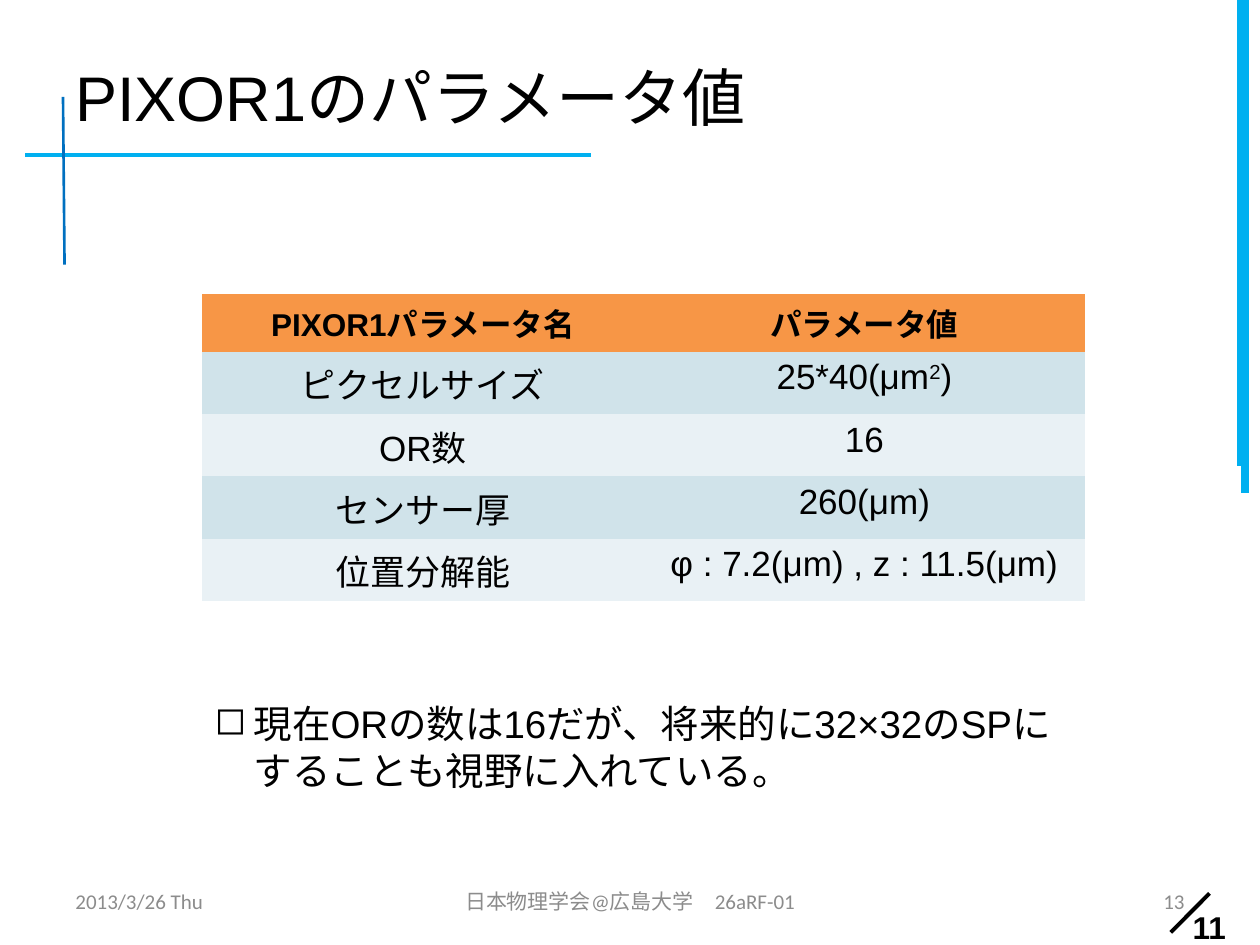
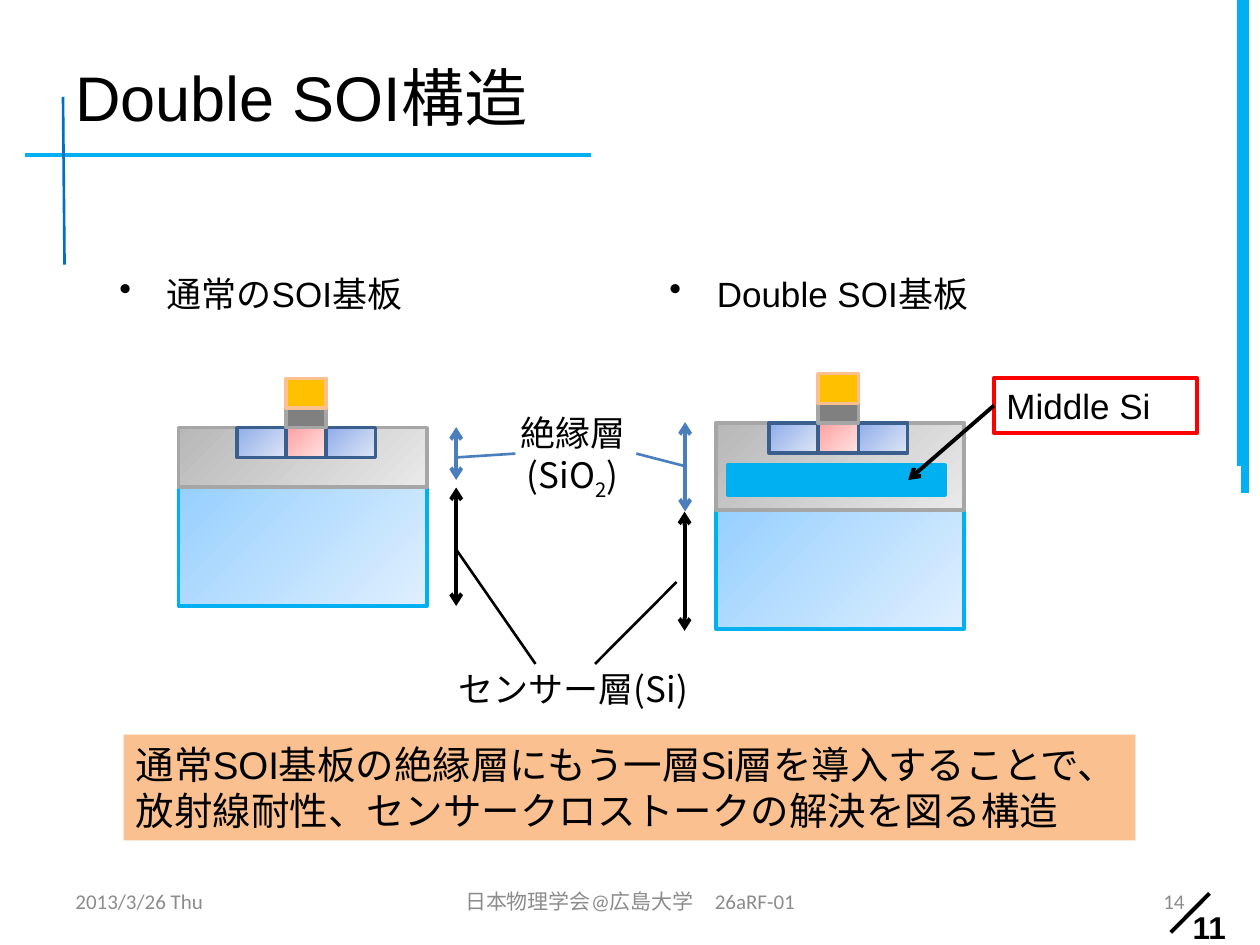
import pptx
import pptx.dml.color
import pptx.enum.dml
import pptx.enum.shapes
import pptx.enum.text
import pptx.oxml
import pptx.oxml.ns
import pptx.util

Pt = pptx.util.Pt
RGB = pptx.dml.color.RGBColor
ALIGN = pptx.enum.text.PP_ALIGN
ANCHOR = pptx.enum.text.MSO_ANCHOR
qn = pptx.oxml.ns.qn

BLACK = RGB(0x00, 0x00, 0x00)
CYAN = RGB(0x00, 0xB0, 0xF0)
RULE_BLUE = RGB(0x00, 0x70, 0xC0)
FOOTER_GRAY = RGB(0x8C, 0x8C, 0x8C)
RED = RGB(0xFF, 0x00, 0x00)
HEADER_ORANGE = RGB(0xF7, 0x96, 0x46)
ROW_DARK = RGB(0xD0, 0xE3, 0xEA)
ROW_LIGHT = RGB(0xE9, 0xF1, 0xF5)
PEACH = RGB(0xFA, 0xC0, 0x90)
ARROW_BLUE = RGB(0x4B, 0x7E, 0xBC)
IMPLANT_EDGE = RGB(0x3A, 0x5F, 0x8C)
OXIDE_EDGE = RGB(0xA6, 0xA6, 0xA6)
GATE_GRAY = RGB(0x80, 0x80, 0x80)
METAL_GOLD = RGB(0xFF, 0xC0, 0x00)
SENSOR_FILL = (RGB(0x96, 0xD0, 0xFF), RGB(0xE0, 0xEF, 0xFF))
OXIDE_FILL = (RGB(0xB8, 0xB8, 0xB8), RGB(0xE9, 0xE9, 0xE9))
IMPLANT_FILL = (RGB(0x8F, 0xAD, 0xE9), RGB(0xDE, 0xE6, 0xF7))
CHANNEL_FILL = (RGB(0xFF, 0xA0, 0xA0), RGB(0xFF, 0xE3, 0xE3))

ARIAL = "Arial"
CALIBRI = "Calibri"
CJK = "Noto Sans CJK JP"
NO_GRID_STYLE = "{2D5ABB26-0587-4C30-8999-92F81FD0307C}"


def add_run(p, text, font, size, color=BLACK, bold=False, baseline=0):
    r = p.add_run()
    r.text = text
    r.font.name = font
    r.font.size = Pt(size)
    r.font.bold = bold
    r.font.color.rgb = color
    rpr = r._r.get_or_add_rPr()
    rpr.append(pptx.oxml.parse_xml(
        f'<a:ea {pptx.oxml.ns.nsdecls("a")} typeface="{CJK}"/>'))
    if baseline:
        rpr.set("baseline", str(baseline * 1000))


def fill_text(tf, runs, size, align=ALIGN.LEFT, anchor=ANCHOR.TOP,
              color=BLACK, bold=False, bullet=None, indent=0):
    tf.word_wrap = True
    tf.vertical_anchor = anchor
    p = tf.paragraphs[0]
    p.alignment = align
    if bullet:
        ppr = p._p.get_or_add_pPr()
        ppr.set("marL", str(Pt(indent)))
        ppr.set("indent", str(-Pt(indent)))
        ppr.append(pptx.oxml.parse_xml(
            f'<a:buChar {pptx.oxml.ns.nsdecls("a")} char="{bullet}"/>'))
    for text, font, *baseline in runs:
        first, *rest = text.split("\n")
        add_run(p, first, font, size, color, bold, *baseline)
        for line in rest:
            p.add_line_break()
            add_run(p, line, font, size, color, bold, *baseline)


def add_text(s, box, runs, size, **style):
    sp = s.shapes.add_textbox(*map(Pt, box))
    fill_text(sp.text_frame, runs, size, **style)


def add_rect(s, box, fill, edge=None, width=2):
    sp = s.shapes.add_shape(
        pptx.enum.shapes.MSO_SHAPE.RECTANGLE, *map(Pt, box))
    sp.shadow.inherit = False
    if fill is None:
        sp.fill.background()
    elif isinstance(fill, RGB):
        sp.fill.solid()
        sp.fill.fore_color.rgb = fill
    else:
        sp.fill.gradient()
        sp.fill.gradient_angle = 315
        for stop, color in zip(sp.fill.gradient_stops, fill):
            stop.color.rgb = color
    if edge is None:
        sp.line.fill.background()
    else:
        sp.line.color.rgb = edge
        sp.line.width = Pt(width)
    return sp


def add_line(s, ends, color, width, arrows=()):
    cn = s.shapes.add_connector(
        pptx.enum.shapes.MSO_CONNECTOR.STRAIGHT, *map(Pt, ends))
    cn.line.color.rgb = color
    cn.line.width = Pt(width)
    sppr = cn._element.spPr
    ln = sppr.find(qn("a:ln"))
    for end in arrows:
        ln.append(pptx.oxml.parse_xml(
            f'<a:{end} {pptx.oxml.ns.nsdecls("a")} type="arrow"/>'))
    sppr.append(pptx.oxml.parse_xml(
        f'<a:effectLst {pptx.oxml.ns.nsdecls("a")}/>'))
    return cn


def add_span_arrow(s, x, top, bottom, color):
    add_line(s, (x, top, x, bottom), color, 2.25, ("headEnd", "tailEnd"))


def new_slide(prs, title, number):
    s = prs.slides.add_slide(prs.slide_layouts[6])
    add_text(s, (664, 515.5, 54, 29), [("11", ARIAL)], 18,
             align=ALIGN.CENTER, bold=True)
    for ends, color, width in (
            ((14.4, 88.6, 337.7, 88.6), CYAN, 2.25),
            ((36, 55.4, 36.9, 151.2), RULE_BLUE, 1.5),
            ((707.8, 0, 707.8, 266.4), CYAN, 2.25),
            ((691.2, 510.5, 669, 532.8), BLACK, 2.25),
            ((711.4, 0, 711.4, 281.5), CYAN, 4.5)):
        add_line(s, ends, color, width)
    add_text(s, (36, 21.6, 648, 67), [(title, ARIAL)], 36,
             anchor=ANCHOR.MIDDLE)
    for left, width, text, align in (
            (36, 168, "2013/3/26 Thu", ALIGN.LEFT),
            (246, 228, "日本物理学会@広島大学　26aRF-01", ALIGN.CENTER),
            (516, 168, str(number), ALIGN.RIGHT)):
        add_text(s, (left, 500.5, width, 28.75), [(text, CALIBRI)], 12,
                 align=align, anchor=ANCHOR.MIDDLE, color=FOOTER_GRAY)
    return s


def add_parameter_table(s, rows):
    frame = s.shapes.add_table(
        len(rows), 2, Pt(115.5), Pt(168), Pt(504.6), Pt(175.7))
    table = frame.table
    frame._element.find(".//" + qn("a:tableStyleId")).text = NO_GRID_STYLE
    for i, row in enumerate(rows):
        header = i == 0
        table.rows[i].height = Pt(33.1 if header else 35.6)
        for j, runs in enumerate(row):
            cell = table.cell(i, j)
            cell.fill.solid()
            cell.fill.fore_color.rgb = (
                HEADER_ORANGE if header else ROW_DARK if i % 2 else ROW_LIGHT)
            fill_text(cell.text_frame, runs, 18 if header else 20,
                      align=ALIGN.CENTER, bold=header)


def add_substrate(s, left, top, oxide_height, implant_left):
    width, implant_width, channel_width = 142, 28.2, 22.9
    channel_left = implant_left + implant_width
    add_rect(s, (left, top + oxide_height, width, 67.8), SENSOR_FILL, CYAN)
    add_rect(s, (left, top, width, oxide_height), OXIDE_FILL, OXIDE_EDGE)
    for x in (implant_left, channel_left + channel_width):
        add_rect(s, (x, top, implant_width, 17), IMPLANT_FILL, IMPLANT_EDGE)
    for offset, height, fill, edge in (
            (0, 17, CHANNEL_FILL, IMPLANT_EDGE),
            (-11.2, 11.2, GATE_GRAY, OXIDE_EDGE),
            (-28.2, 17, METAL_GOLD, PEACH)):
        add_rect(s, (channel_left, top + offset, channel_width, height),
                 fill, edge)


def build_parameters(prs):
    s = new_slide(prs, "PIXOR1のパラメータ値", 13)
    add_text(s, (115.5, 396.7, 504.6, 60.6),
             [("現在", CJK),
              ("ORの数は16だが、将来的に32×32のSPに\n"
               "することも視野に入れている。", ARIAL)],
             22, bullet="◻", indent=22.4)
    add_parameter_table(s, [
        ([("PIXOR1", ARIAL), ("パラメータ名", CJK)], [("パラメータ値", CJK)]),
        ([("ピクセルサイズ", CJK)],
         [("25*40(μm", ARIAL), ("2", ARIAL, 30), (")", ARIAL)]),
        ([("OR", ARIAL), ("数", CJK)], [("16", ARIAL)]),
        ([("センサー厚", CJK)], [("260(μm)", ARIAL)]),
        ([("位置分解能", CJK)], [("φ : 7.2(μm) , z : 11.5(μm)", ARIAL)]),
    ])


def build_double_soi(prs):
    s = new_slide(prs, "Double SOI構造", 14)
    add_substrate(s, 102, 244.4, 34, 135.3)
    add_substrate(s, 409, 241.8, 49.8, 439.4)
    for left, runs in ((49.7, [("通常の", CJK), ("SOI基板", ARIAL)]),
                       (368.6, [("Double SOI基板", ARIAL)])):
        add_text(s, (left, 152, 198.7, 31.5), runs, 20,
                 align=ALIGN.CENTER, bullet="•", indent=27)
    add_rect(s, (416, 265.8, 124, 17), CYAN, CYAN)

    add_span_arrow(s, 260.7, 278.6, 346.3, BLACK)
    add_span_arrow(s, 391.2, 292.4, 360.5, BLACK)
    add_text(s, (244.1, 378, 167, 31.5), [("センサー層(Si)", CJK)], 20,
             align=ALIGN.CENTER)
    add_line(s, (306, 379.4, 260.7, 314), BLACK, 1.5)
    add_line(s, (340, 379.4, 386.6, 332.6), BLACK, 1.5)

    add_span_arrow(s, 260.7, 244.1, 274.3, ARROW_BLUE)
    add_span_arrow(s, 391.5, 241.2, 292.3, ARROW_BLUE)
    add_text(s, (275.8, 231.8, 103, 55.7),
             [("絶縁層(SiO", CJK), ("2", CJK, -25), (")", CJK)], 20,
             align=ALIGN.CENTER)
    add_line(s, (363.6, 259.2, 391.5, 266.4), ARROW_BLUE, 1.5)
    add_line(s, (294.5, 259.2, 260.7, 261.4), ARROW_BLUE, 1.5)

    summary = add_rect(s, (70.6, 419.8, 578.2, 60.5), PEACH)
    fill_text(summary.text_frame,
              [("通常", CJK),
               ("SOI基板の絶縁層にもう一層Si層を導入することで、"
                "放射線耐性、センサークロストークの解決を図る構造", ARIAL)], 22)

    middle_si = add_rect(s, (568, 216, 116, 31.5), None, RED, 2.25)
    fill_text(middle_si.text_frame, [("Middle Si", ARIAL)], 20)
    pointer = add_line(s, (568, 231.8, 519, 274.3), BLACK, 2.25, ("tailEnd",))
    pointer.begin_connect(middle_si, 1)


def main():
    prs = pptx.Presentation()
    prs.slide_width = Pt(720)
    prs.slide_height = Pt(540)
    build_parameters(prs)
    build_double_soi(prs)
    prs.save("out.pptx")


if __name__ == "__main__":
    main()
